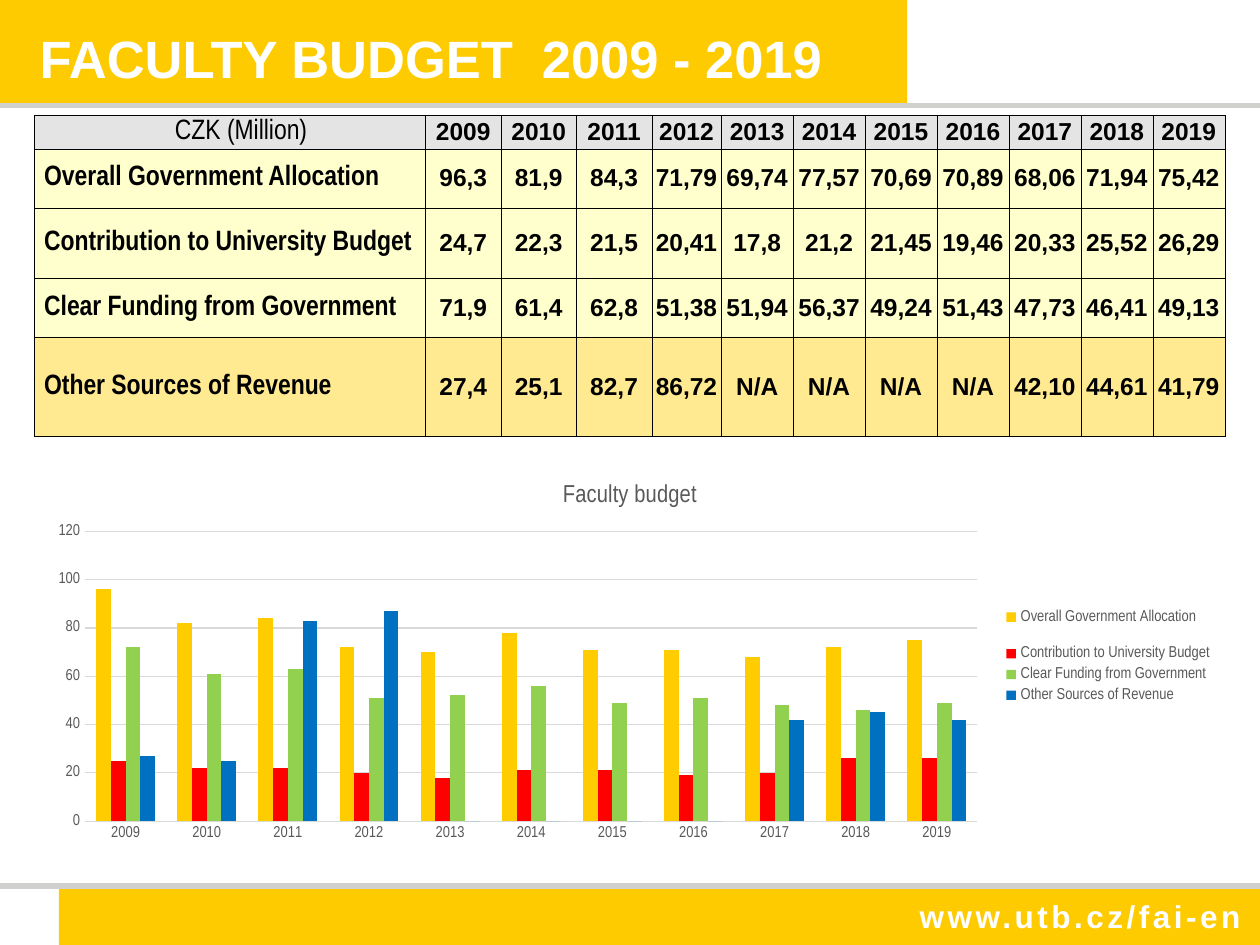
"""Build the faculty budget slide with its table and column chart."""
from dataclasses import dataclass

import lxml.etree
import pptx
import pptx.chart.data
import pptx.dml.color
import pptx.enum.chart
import pptx.enum.shapes
import pptx.enum.text
import pptx.oxml.ns
import pptx.util

Cm = pptx.util.Cm
Pt = pptx.util.Pt
qn = pptx.oxml.ns.qn
ALIGN = pptx.enum.text.PP_ALIGN
MIDDLE = pptx.enum.text.MSO_ANCHOR.MIDDLE


@dataclass(frozen=True)
class Theme:
    brand: str = "FECB00"
    rule: str = "D0D0CE"
    white: str = "FFFFFF"
    ink: str = "000000"
    header: str = "E4E4E4"
    government: str = "FFFFCD"
    other: str = "FFEA91"
    chart_text: str = "595959"
    grid: str = "D9D9D9"
    series: tuple = ("FFCC00", "FF0000", "92D050", "0070C0")
    font: str = "Arial"
    narrow: str = "Arial Narrow"
    title_size: int = 30
    web_size: int = 18
    label_size: int = 16
    value_size: int = 14
    chart_title_size: int = 14
    chart_size: int = 9


YEARS = [str(year) for year in range(2009, 2020)]
BUDGET = {
    "Overall Government Allocation":
        "96,3 81,9 84,3 71,79 69,74 77,57 70,69 70,89 68,06 71,94 75,42".split(),
    "Contribution to University Budget":
        "24,7 22,3 21,5 20,41 17,8 21,2 21,45 19,46 20,33 25,52 26,29".split(),
    "Clear Funding from Government":
        "71,9 61,4 62,8 51,38 51,94 56,37 49,24 51,43 47,73 46,41 49,13".split(),
    "Other Sources of Revenue":
        "27,4 25,1 82,7 86,72 N/A N/A N/A N/A 42,10 44,61 41,79".split(),
}
COLUMN_WIDTHS = [7.89] + [1.52] * 3 + [1.4] + [1.45] * 7
ROW_HEIGHTS = [0.68, 1.19, 1.42, 1.19, 2]


def rgb(color):
    return pptx.dml.color.RGBColor.from_string(color)


def amount(text):
    return 0 if text == "N/A" else round(float(text.replace(",", ".")))


class SlideBuilder:
    def __init__(self, presentation, theme):
        self.theme = theme
        self.slide = presentation.slides.add_slide(presentation.slide_layouts[5])

    def style(self, font, size, color, name, bold=False):
        font.size = Pt(size)
        font.name = name
        font.bold = bold
        font.color.rgb = rgb(color)

    def bar(self, left, top, width, height):
        shape = self.slide.shapes.add_shape(
            pptx.enum.shapes.MSO_SHAPE.RECTANGLE, Cm(left), Cm(top), Cm(width), Cm(height))
        shape.shadow.inherit = False
        shape.fill.solid()
        shape.fill.fore_color.rgb = rgb(self.theme.brand)
        shape.line.fill.background()

    def rule(self, top):
        connector = self.slide.shapes.add_connector(
            pptx.enum.shapes.MSO_CONNECTOR.STRAIGHT, Cm(0), Cm(top), Cm(25.4), Cm(top))
        connector.line.color.rgb = rgb(self.theme.rule)
        connector.line.width = Pt(3)
        lxml.etree.SubElement(connector.element.spPr, qn("a:effectLst"))

    def title(self, text, left, top, width, height):
        shape = self.slide.shapes.title
        self.slide.shapes.element.append(shape.element)
        shape.left, shape.top, shape.width, shape.height = map(Cm, (left, top, width, height))
        frame = shape.text_frame
        frame.text = text
        frame.word_wrap = False
        frame.auto_size = pptx.enum.text.MSO_AUTO_SIZE.NONE
        frame.vertical_anchor = MIDDLE
        frame.margin_left = frame.margin_right = 0
        paragraph = frame.paragraphs[0]
        paragraph.alignment = ALIGN.LEFT
        self.style(paragraph.font, self.theme.title_size, self.theme.white, self.theme.font, True)

    def web_address(self, text, left, top, width, height):
        shape = self.slide.shapes.add_textbox(Cm(left), Cm(top), Cm(width), Cm(height))
        frame = shape.text_frame
        frame.text = text
        frame.word_wrap = False
        paragraph = frame.paragraphs[0]
        self.style(paragraph.font, self.theme.web_size, self.theme.white, self.theme.font, True)
        paragraph.runs[0].font._element.set("spc", "200")

    def cell(self, cell, text, fill, size, name, bold=True, alignment=ALIGN.CENTER, inset=0):
        properties = cell._tc.get_or_add_tcPr()
        for side in ("lnL", "lnR", "lnT", "lnB"):
            line = lxml.etree.SubElement(properties, qn(f"a:{side}"), w=str(Pt(0.25)))
            paint = lxml.etree.SubElement(line, qn("a:solidFill"))
            lxml.etree.SubElement(paint, qn("a:srgbClr"), val=self.theme.ink)
        cell.fill.solid()
        cell.fill.fore_color.rgb = rgb(fill)
        cell.margin_left = Cm(inset)
        cell.margin_right = cell.margin_top = cell.margin_bottom = 0
        cell.vertical_anchor = MIDDLE
        cell.text = text
        paragraph = cell.text_frame.paragraphs[0]
        paragraph.alignment = alignment
        self.style(paragraph.font, size, self.theme.ink, name, bold)

    def table(self, left, top):
        theme = self.theme
        table = self.slide.shapes.add_table(
            len(ROW_HEIGHTS), len(COLUMN_WIDTHS), Cm(left), Cm(top),
            Cm(sum(COLUMN_WIDTHS)), Cm(sum(ROW_HEIGHTS))).table
        for column, width in zip(table.columns, COLUMN_WIDTHS):
            column.width = Cm(width)
        for row, height in zip(table.rows, ROW_HEIGHTS):
            row.height = Cm(height)
        fills = [theme.header] + [theme.government] * 3 + [theme.other]
        records = [("CZK (Million)", YEARS), *BUDGET.items()]
        for index, (fill, (label, values)) in enumerate(zip(fills, records)):
            heading = index == 0
            self.cell(table.cell(index, 0), label, fill, theme.label_size, theme.narrow,
                      bold=not heading, alignment=ALIGN.CENTER if heading else ALIGN.LEFT,
                      inset=0.45 if heading else 0.2)
            for position, value in enumerate(values, 1):
                self.cell(table.cell(index, position), value, fill, theme.value_size, theme.font)

    def chart(self, title, left, top, width, height):
        theme = self.theme
        data = pptx.chart.data.CategoryChartData()
        data.categories = YEARS
        for index, (label, values) in enumerate(BUDGET.items()):
            data.add_series(label if index else label + "\n", map(amount, values))
        chart = self.slide.shapes.add_chart(
            pptx.enum.chart.XL_CHART_TYPE.COLUMN_CLUSTERED,
            Cm(left), Cm(top), Cm(width), Cm(height), data).chart
        self.style(chart.font, theme.chart_size, theme.chart_text, theme.narrow)
        chart.has_title = True
        chart.chart_title.text_frame.text = title
        self.style(chart.chart_title.text_frame.paragraphs[0].font,
                   theme.chart_title_size, theme.chart_text, theme.narrow)
        chart.has_legend = True
        chart.legend.position = pptx.enum.chart.XL_LEGEND_POSITION.RIGHT
        chart.legend.include_in_layout = False
        plot = chart.plots[0]
        plot.gap_width = 150
        plot.overlap = 0
        plot.vary_by_categories = False
        for series, color in zip(plot.series, theme.series):
            series.format.fill.solid()
            series.format.fill.fore_color.rgb = rgb(color)
        for axis in (chart.category_axis, chart.value_axis):
            axis.major_tick_mark = axis.minor_tick_mark = pptx.enum.chart.XL_TICK_MARK.NONE
            axis.format.line.fill.background()
        axis = chart.value_axis
        axis.minimum_scale, axis.maximum_scale, axis.major_unit = 0, 120, 20
        axis.major_gridlines.format.line.color.rgb = rgb(theme.grid)
        axis.major_gridlines.format.line.width = Pt(0.75)


def main():
    presentation = pptx.Presentation()
    presentation.slide_width, presentation.slide_height = Cm(25.4), Cm(19.05)
    builder = SlideBuilder(presentation, Theme())
    builder.bar(0, 0, 18.29, 2.13)
    builder.bar(1.19, 17.88, 24.21, 1.17)
    builder.rule(2.13)
    builder.rule(17.86)
    builder.web_address("www.utb.cz/fai-en", 18.29, 17.96, 7.11, 1.02)
    builder.title("FACULTY BUDGET  2009 - 2019", 0.8, 0.39, 16.2, 1.55)
    builder.table(0.69, 2.32)
    builder.chart("Faculty budget", 0.7, 9.33, 24, 7.8)
    presentation.save("out.pptx")


if __name__ == "__main__":
    main()
